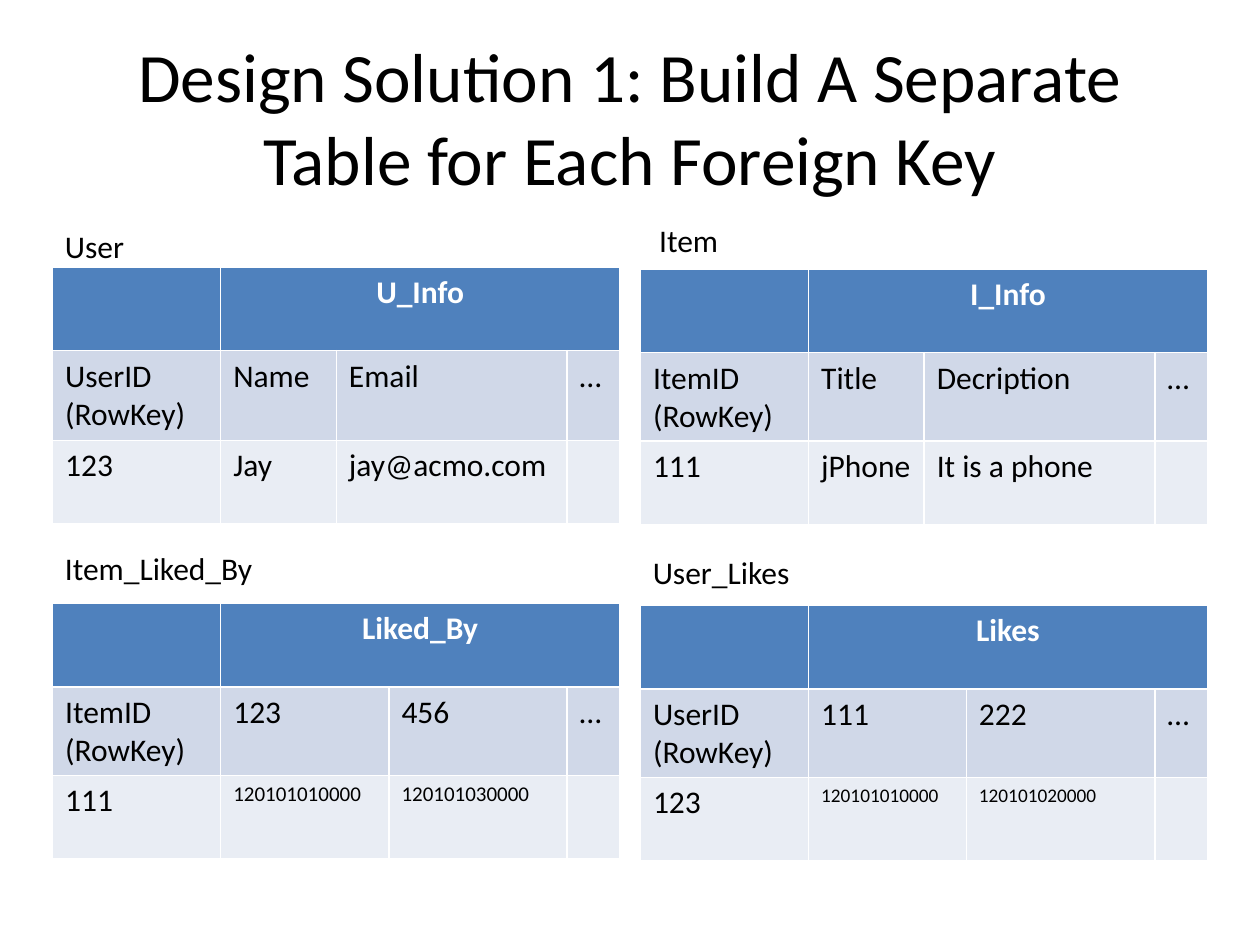
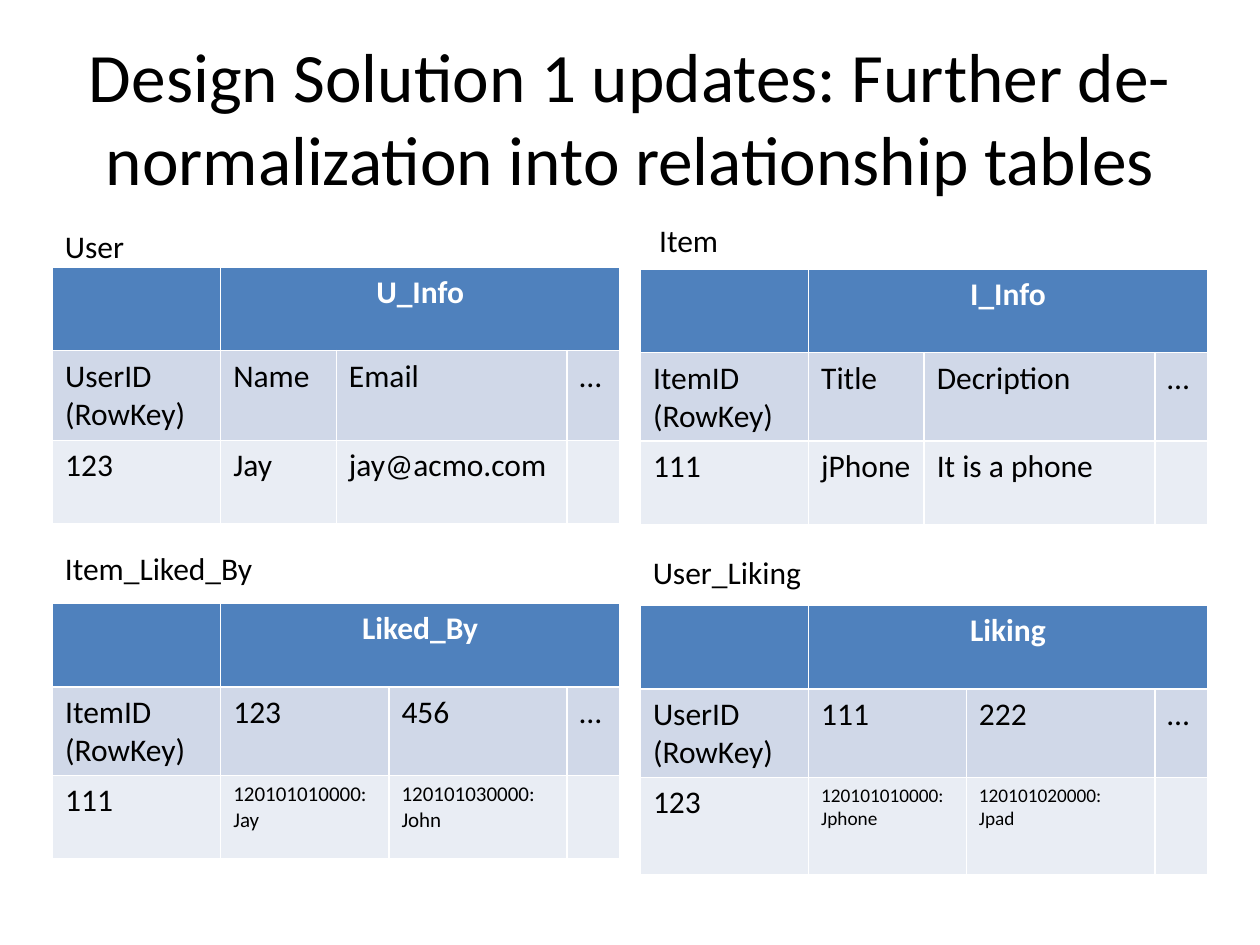
from pptx import Presentation
from pptx.dml.color import RGBColor
from pptx.enum.text import MSO_ANCHOR, MSO_AUTO_SIZE, PP_ALIGN
from pptx.util import Cm, Pt

COLORS = {"text": "000000", "header_text": "FFFFFF", "header": "4F81BD", "names": "D0D8E8", "values": "E9EDF4"}
FONT = "Calibri"
TABLE_WIDTH, KEY_WIDTH, MORE_WIDTH = 11.43, 3.39, 1.06
ROW_HEIGHTS = [1.69, 1.78, 1.69]
LEFT, RIGHT = 1.06, 12.91


def write(text_frame, text, size=18, color="text", bold=False, align=PP_ALIGN.LEFT):
    text_frame.text = text
    for paragraph in text_frame.paragraphs:
        paragraph.alignment = align
        paragraph.font.name = FONT
        paragraph.font.size = Pt(size)
        paragraph.font.bold = bold
        paragraph.font.color.rgb = RGBColor.from_string(COLORS[color])


def add_entity(slide, label, label_at, table_at, family, names, values, first_width, value_size=18, value_height=1.69):
    heights = ROW_HEIGHTS[:2] + [value_height]
    widths = [KEY_WIDTH, first_width, TABLE_WIDTH - KEY_WIDTH - first_width - MORE_WIDTH, MORE_WIDTH]
    table_left, table_top = table_at
    table = slide.shapes.add_table(3, 4, Cm(table_left), Cm(table_top), Cm(TABLE_WIDTH), Cm(sum(heights))).table
    for column, width in zip(table.columns, widths):
        column.width = Cm(width)
    for row, height in zip(table.rows, heights):
        row.height = Cm(height)
    table.cell(0, 1).merge(table.cell(0, 3))

    contents = [["", family, "", ""], names + ["…"], values + [""]]
    for row_index, (texts, fill) in enumerate(zip(contents, ["header", "names", "values"])):
        for column_index, text in enumerate(texts):
            cell = table.cell(row_index, column_index)
            cell.fill.solid()
            cell.fill.fore_color.rgb = RGBColor.from_string(COLORS[fill])
            if not text:
                continue
            if row_index == 0:
                write(cell.text_frame, text, color="header_text", bold=True, align=PP_ALIGN.CENTER)
            else:
                small = row_index == 2 and column_index > 0
                write(cell.text_frame, text, size=value_size if small else 18)

    label_left, label_top, label_width = label_at
    label_box = slide.shapes.add_textbox(Cm(label_left), Cm(label_top), Cm(label_width), Cm(1.02))
    label_box.text_frame.word_wrap = True
    label_box.text_frame.auto_size = MSO_AUTO_SIZE.SHAPE_TO_FIT_TEXT
    write(label_box.text_frame, label)


presentation = Presentation()
presentation.slide_width, presentation.slide_height = Cm(25.4), Cm(19.05)

designs = [
    {
        "title": "Design Solution 1: Build A Separate Table for Each Foreign Key",
        "liked_by": ["120101010000", "120101030000"],
        "likes_label": "User_Likes",
        "likes_family": "Likes",
        "likes": ["120101010000", "120101020000"],
        "likes_height": 1.69,
    },
    {
        "title": "Design Solution 1 updates: Further de-normalization into relationship tables",
        "liked_by": ["120101010000:\nJay", "120101030000:\nJohn"],
        "likes_label": "User_Liking",
        "likes_family": "Liking",
        "likes": ["120101010000:\nJphone", "120101020000:\nJpad"],
        "likes_height": 1.97,
    },
]

for design in designs:
    slide = presentation.slides.add_slide(presentation.slide_layouts[5])
    title = slide.shapes.title
    title.left, title.top, title.width, title.height = Cm(1.27), Cm(0.76), Cm(22.86), Cm(3.18)
    title.text_frame.word_wrap = True
    title.text_frame.auto_size = MSO_AUTO_SIZE.NONE
    title.text_frame.vertical_anchor = MSO_ANCHOR.MIDDLE
    write(title.text_frame, design["title"], size=39.6, align=PP_ALIGN.CENTER)

    add_entity(slide, "User", (LEFT, 4.45, 2.54), (LEFT, 5.38), "U_Info",
               ["UserID (RowKey)", "Name", "Email"], ["123", "Jay", "jay@acmo.com"], 2.33)
    add_entity(slide, "Item", (13.04, 4.34, 2.54), (RIGHT, 5.42), "I_Info",
               ["ItemID (RowKey)", "Title", "Decription"], ["111", "jPhone", "It is a phone"], 2.33)
    add_entity(slide, "Item_Liked_By", (LEFT, 10.95, 5.2), (LEFT, 12.16), "Liked_By",
               ["ItemID (RowKey)", "123", "456"], ["111"] + design["liked_by"], 3.39, value_size=12)
    add_entity(slide, design["likes_label"], (RIGHT, 11.02, 4.45), (RIGHT, 12.2), design["likes_family"],
               ["UserID (RowKey)", "111", "222"], ["123"] + design["likes"], 3.18,
               value_size=11, value_height=design["likes_height"])

presentation.save("out.pptx")
